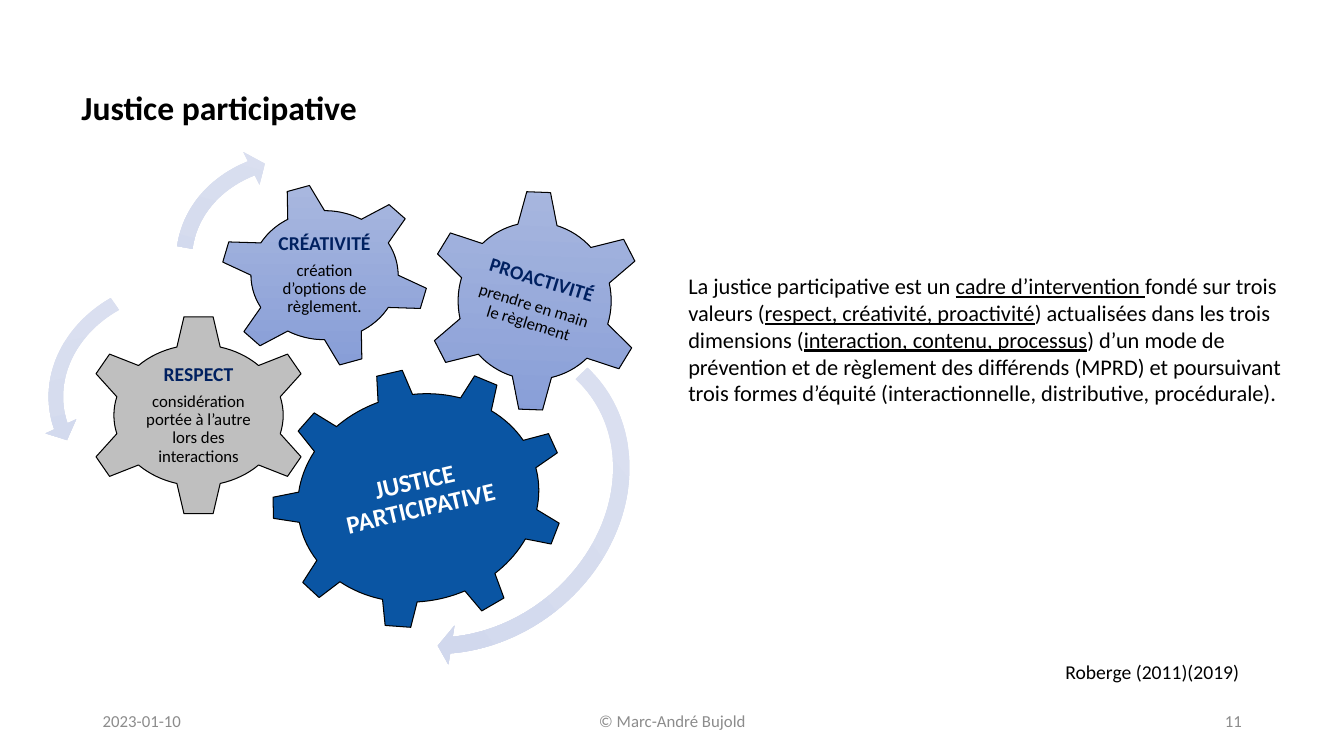
import math

from pptx import Presentation
from pptx import util as u
from pptx.dml import color
from pptx.enum import shapes, text

COLUMNS, ROWS = 40, 22.5
CELL = u.Inches(7.5) / ROWS
FONT = "Calibri"
BLACK, NAVY, GREY, WHITE = "000000", "002060", "8C8C8C", "FFFFFF"
GEAR_BLUES = ("A8B7DF", "889ED7")
ARROW_BLUES = ("DEE3F1", "CBD3EB")
CENTER, LEFT, RIGHT = text.PP_ALIGN.CENTER, text.PP_ALIGN.LEFT, text.PP_ALIGN.RIGHT
HEADING = {"size": u.Pt(14), "bold": True}
DETAIL = {"size": u.Pt(12)}
TOOTH_TIPS = [
    [(3.03, 0.39), (2.85, 0.99)],
    [(1.11, 2.49), (0.45, 2.67)],
    [(-1.92, 2.1), (-2.4, 1.68)],
]


def rgb(value):
    return color.RGBColor.from_string(value)


def cells(*values):
    return [u.Emu(round(value * CELL)) for value in values]


def set_all(target, values):
    for name, value in values.items():
        setattr(target, name, value)


def paint(shape, fill, outlined):
    shape.shadow.inherit = False
    if isinstance(fill, str):
        shape.fill.solid()
        shape.fill.fore_color.rgb = rgb(fill)
    else:
        shape.fill.gradient()
        shape.fill.gradient_angle = 270
        for stop, tint, position in zip(shape.fill.gradient_stops, fill, (0, 1)):
            stop.position = position
            stop.color.rgb = rgb(tint)
    if outlined:
        shape.line.color.rgb = rgb(BLACK)
        shape.line.width = u.Pt(0.75)
    else:
        shape.line.fill.background()


def write(box, paragraphs, align=LEFT, layout=None, spacing=None):
    frame = box.text_frame
    set_all(frame, {"word_wrap": True, **(layout or {})})
    for index, runs in enumerate(paragraphs):
        para = frame.add_paragraph() if index else frame.paragraphs[0]
        set_all(para, {"alignment": align, **(spacing or {})})
        for words, tint, values in runs:
            span = para.add_run()
            span.text = words
            set_all(span.font, {"name": FONT, **values})
            span.font.color.rgb = rgb(tint)


def write_in_gear(box, paragraphs, margin=0.06):
    middle = {"vertical_anchor": text.MSO_ANCHOR.MIDDLE}
    sides = {f"margin_{side}": cells(margin)[0] for side in ("left", "right", "top", "bottom")}
    write(box, paragraphs, CENTER, {**middle, **sides}, {"line_spacing": 0.9, "space_after": u.Pt(5)})


def value_text(heading, detail):
    return [[(heading, NAVY, HEADING)], [(detail, BLACK, DETAIL)]]


def add_text(page, place, paragraphs, align=LEFT, layout=None):
    box = page.shapes.add_textbox(*cells(*place))
    write(box, paragraphs, align, layout)


def add_footer(page, place, words, align):
    runs = [(words, GREY, {"size": u.Pt(12)})]
    add_text(page, place, [runs], align, {"vertical_anchor": text.MSO_ANCHOR.MIDDLE})


def add_preset(page, kind, place, fill, rotation=0, outlined=True):
    shape = page.shapes.add_shape(kind, *cells(*place))
    shape.rotation = rotation
    paint(shape, fill, outlined)
    return shape


def add_arrow(page, kind, place, rotation, settings):
    arrow = add_preset(page, kind, place, ARROW_BLUES, rotation, False)
    for index, value in enumerate(settings):
        arrow.adjustments[index] = value


def add_tilted_gear(page, center, radii, fill):
    def rim(degrees):
        turn = math.radians(degrees)
        return radii[0] * math.cos(turn), radii[1] * math.sin(turn)

    opposite = [[(-x, -y) for x, y in tips] for tips in TOOTH_TIPS]
    outline = []
    for index, tips in enumerate(TOOTH_TIPS + opposite):
        start = index * 60
        outline += [rim(start), *tips]
        outline += [rim(start + 30 + step) for step in range(0, 30, 3)]
    points = [cells(center[0] + x, center[1] + y) for x, y in outline]
    builder = page.shapes.build_freeform(*points[0])
    builder.add_line_segments(points[1:], close=True)
    gear = builder.convert_to_shape()
    paint(gear, fill, True)
    return gear


def add_gears(page):
    kinds = shapes.MSO_SHAPE
    justice = add_preset(page, kinds.GEAR_9, (8.07, 10.98, 8.76, 7.68), "0A55A3", 347)
    write_in_gear(justice, [[("JUSTICE PARTICIPATIVE", WHITE, {"size": u.Pt(18), "bold": True})]])
    respect = add_preset(page, kinds.GEAR_6, (2.49, 9.36, 6.84, 6), "BFBFBF")
    write_in_gear(respect, value_text("RESPECT", "considération portée à l’autre lors des interactions"))
    creativity = add_tilted_gear(page, (9.66, 8.19), (2.19, 1.92), GEAR_BLUES)
    write_in_gear(creativity, value_text("CRÉATIVITÉ", "création d’options de règlement."), 1.43)

    right, left = kinds.CIRCULAR_ARROW, kinds.LEFT_CIRCULAR_ARROW
    add_arrow(page, right, (8.88, 9.03, 9.72, 11.22), 51.6, (0.05, 2.99, 25.33, 158.25, 0.06))
    add_arrow(page, left, (1.14, 8.04, 8.16, 7.14), 347.6, (0.06, 4.3, 104.89, 148.38, 0.07))
    add_arrow(page, right, (4.89, 4.23, 9.18, 7.71), 15.1, (0.06, 3.94, 133.14, 105.08, 0.07))

    add_preset(page, kinds.GEAR_6, (12.66, 5.64, 6.51, 6.63), GEAR_BLUES, 2.1)
    proactivity = page.shapes.add_textbox(*cells(14.1, 7.11, 3.66, 3.72))
    proactivity.rotation = 17.1
    write_in_gear(proactivity, value_text("PROACTIVITÉ", "prendre en main le règlement"))


def main():
    deck = Presentation()
    set_all(deck, dict(zip(("slide_width", "slide_height"), cells(COLUMNS, ROWS))))
    page = deck.slides.add_slide(deck.slide_layouts[6])

    title = ("Justice participative", BLACK, {"size": u.Pt(24), "bold": True})
    add_text(page, (2.13, 2.43, 8.91, 1.5), [[title]], layout={"word_wrap": False})

    definition = [
        ("La justice participative est un ", False),
        ("cadre d’intervention ", True),
        ("fondé sur trois valeurs (", False),
        ("respect, créativité, proactivité", True),
        (") actualisées dans les trois dimensions (", False),
        ("interaction, contenu, processus", True),
        (") d’un mode de prévention et de règlement des différends (MPRD) et poursuivant "
         "trois formes d’équité (interactionnelle, distributive, procédurale).", False),
    ]
    runs = [(words, BLACK, {"size": u.Pt(16), "underline": lined}) for words, lined in definition]
    add_text(page, (20.19, 7.95, 18.27, 5.16), [runs])

    add_gears(page)
    source = ("Roberge (2011)(2019)", BLACK, {"size": u.Pt(14)})
    add_text(page, (31.41, 19.5, 5.85, 1.02), [[source]], layout={"word_wrap": False})
    add_footer(page, (2.76, 20.85, 9, 1.2), "2023-01-10", LEFT)
    add_footer(page, (13.26, 20.85, 13.5, 1.2), "© Marc-André Bujold", CENTER)
    add_footer(page, (28.26, 20.85, 9, 1.2), "11", RIGHT)
    deck.save("out.pptx")


if __name__ == "__main__":
    main()
